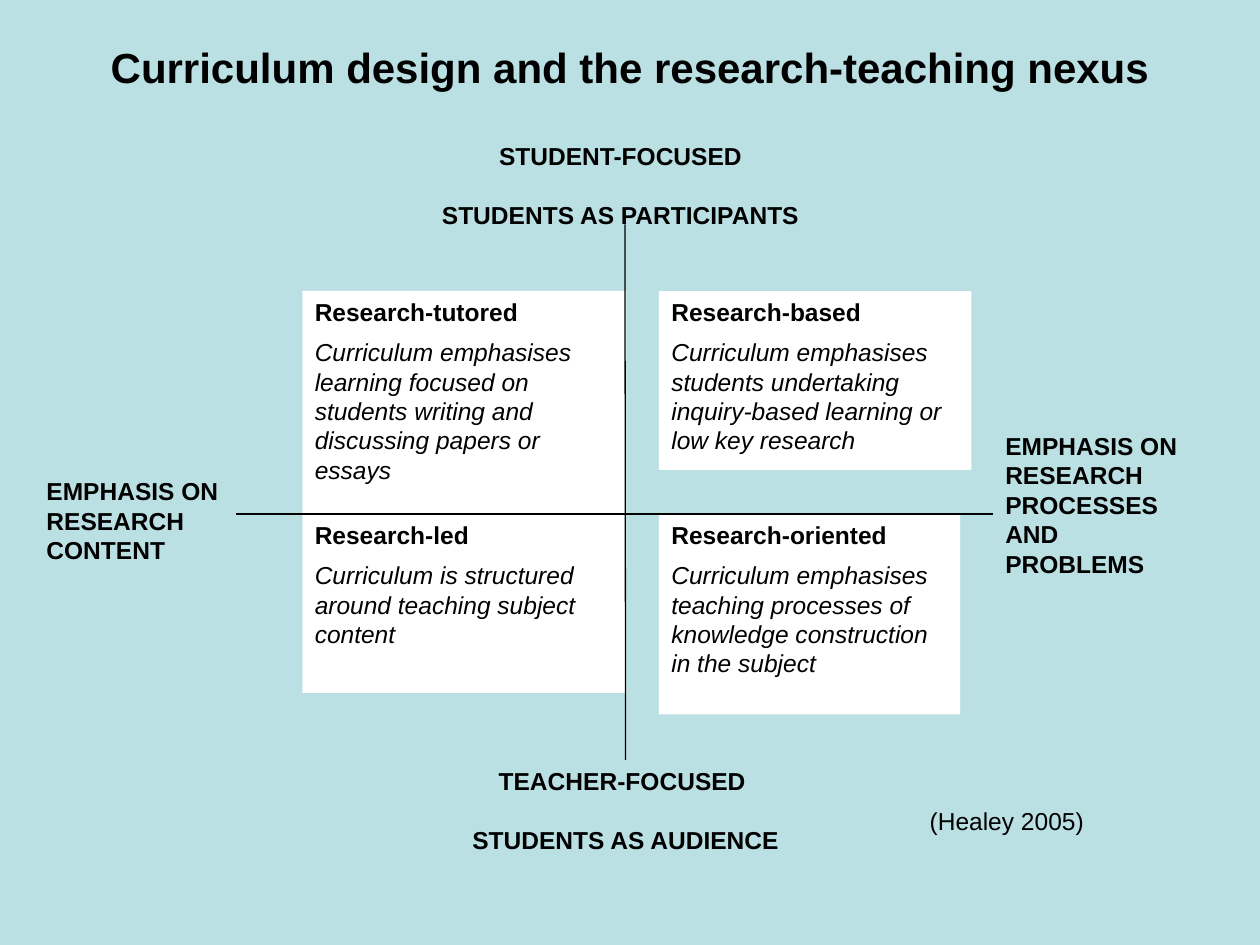
from dataclasses import dataclass
from pptx import Presentation
from pptx.dml.color import RGBColor
from pptx.enum.shapes import MSO_CONNECTOR, MSO_SHAPE
from pptx.enum.text import MSO_ANCHOR, PP_ALIGN
from pptx.oxml.ns import qn
from pptx.shapes.autoshape import Shape
from pptx.shapes.connector import Connector
from pptx.util import Inches, Pt
from lxml.etree import SubElement

HUE = {"back": "BBE0E3", "card": "FFFFFF", "ink": "000000"}
FONT = {"name": "Arial", "size": Pt(14), "bold": False, "italic": False}
COLS, ROWS = 100, 75

# Grid positions shared by the parts
LEFT, RIGHT = 24, 52.3
TOP, MID = 23.1, 40.8
AXIS, FOOT = 49.6, 60.3


@dataclass
class Card:
    x: float
    y: float
    w: float
    h: float
    head: str
    body: str


@dataclass
class Label:
    x: float
    y: float
    w: float
    h: float
    lines: tuple[str, ...]
    align: PP_ALIGN = PP_ALIGN.LEFT
    size: float = 14
    bold: bool = True


CARDS = [
    Card(LEFT, TOP, 25.7, MID - TOP, "Research-tutored",
         "Curriculum emphasises learning focused on students writing "
         "and discussing papers or essays"),
    Card(RIGHT, TOP, 24.8, 14.2, "Research-based",
         "Curriculum emphasises students undertaking inquiry-based "
         "learning or low key research"),
    Card(LEFT, MID, 25.7, 14.2, "Research-led",
         "Curriculum is structured around teaching subject content"),
    Card(RIGHT, MID, 23.9, 15.9, "Research-oriented",
         "Curriculum emphasises teaching processes of knowledge "
         "construction in the subject"),
]
FOOTER = Label(33.7, FOOT, 31.9, 8.8,
               ("TEACHER-FOCUSED ", "STUDENTS AS AUDIENCE"), PP_ALIGN.CENTER)
LABELS = [
    Label(24.9, 10.7, 48.7, 10.6,
          ("STUDENT-FOCUSED", "STUDENTS AS PARTICIPANTS"), PP_ALIGN.CENTER),
    Label(2.7, 37.3, 22.1, 8.8, ("EMPHASIS ON RESEARCH CONTENT",)),
    Label(78.8, 33.7, 16.8, 15.9,
          ("EMPHASIS ON RESEARCH PROCESSES AND PROBLEMS",)),
    Label(0, 2.8, COLS, 5,
          ("Curriculum design and the research-teaching nexus",),
          PP_ALIGN.CENTER, 24),
    Label(72.8, 63.5, 21.3, 3.3, ("(Healey 2005)",), bold=False),
]

deck = Presentation()
deck.slide_width, deck.slide_height = Inches(10), Inches(7.5)
slide = deck.slides.add_slide(deck.slide_layouts[6])


def place(x: float, y: float) -> tuple[int, int]:
    return (round(deck.slide_width * x / COLS),
            round(deck.slide_height * y / ROWS))


def write(shape: Shape, lines: tuple[str, ...], styles: list[dict],
          align: PP_ALIGN) -> None:
    frame = shape.text_frame
    frame.word_wrap = True
    frame.vertical_anchor = MSO_ANCHOR.TOP
    for i, (line, style) in enumerate(zip(lines, styles)):
        para = frame.add_paragraph() if i else frame.paragraphs[0]
        para.alignment = align
        run = para.add_run()
        run.text = line
        for key, val in (FONT | style).items():
            setattr(run.font, key, val)
        run.font.color.rgb = RGBColor.from_string(HUE["ink"])


def draw_card(card: Card) -> None:
    box = slide.shapes.add_shape(MSO_SHAPE.RECTANGLE, *place(card.x, card.y),
                                 *place(card.w, card.h))
    box.shadow.inherit = False
    box.fill.solid()
    box.fill.fore_color.rgb = RGBColor.from_string(HUE["card"])
    box.line.fill.background()
    write(box, (card.head, card.body), [{"bold": True}, {"italic": True}],
          PP_ALIGN.LEFT)
    box.text_frame.paragraphs[0].space_after = Pt(6)


def draw_label(label: Label) -> Shape:
    box = slide.shapes.add_textbox(*place(label.x, label.y),
                                   *place(label.w, label.h))
    style = {"size": Pt(label.size), "bold": label.bold}
    write(box, label.lines, [style] * len(label.lines), label.align)
    for para in box.text_frame.paragraphs[1:]:
        para.space_before = Pt(17)
    return box


def draw_axis(x: float, y: float, x2: float, y2: float) -> Connector:
    line = slide.shapes.add_connector(MSO_CONNECTOR.STRAIGHT,
                                      *place(x, y), *place(x2, y2))
    line.line.width = Pt(0.75)
    line.line.color.rgb = RGBColor.from_string(HUE["ink"])
    SubElement(line._element.spPr, qn("a:effectLst"))
    return line


# Background
fill = slide.background.fill
fill.solid()
fill.fore_color.rgb = RGBColor.from_string(HUE["back"])

# Quadrants
for card in CARDS:
    draw_card(card)

# Axes
draw_axis(18.7, MID, 78.8, MID)
stem = draw_axis(AXIS, 17.8, AXIS, FOOT)

# Axis ends, title and credit
stem.end_connect(draw_label(FOOTER), 0)
for label in LABELS:
    draw_label(label)

deck.save("out.pptx")
